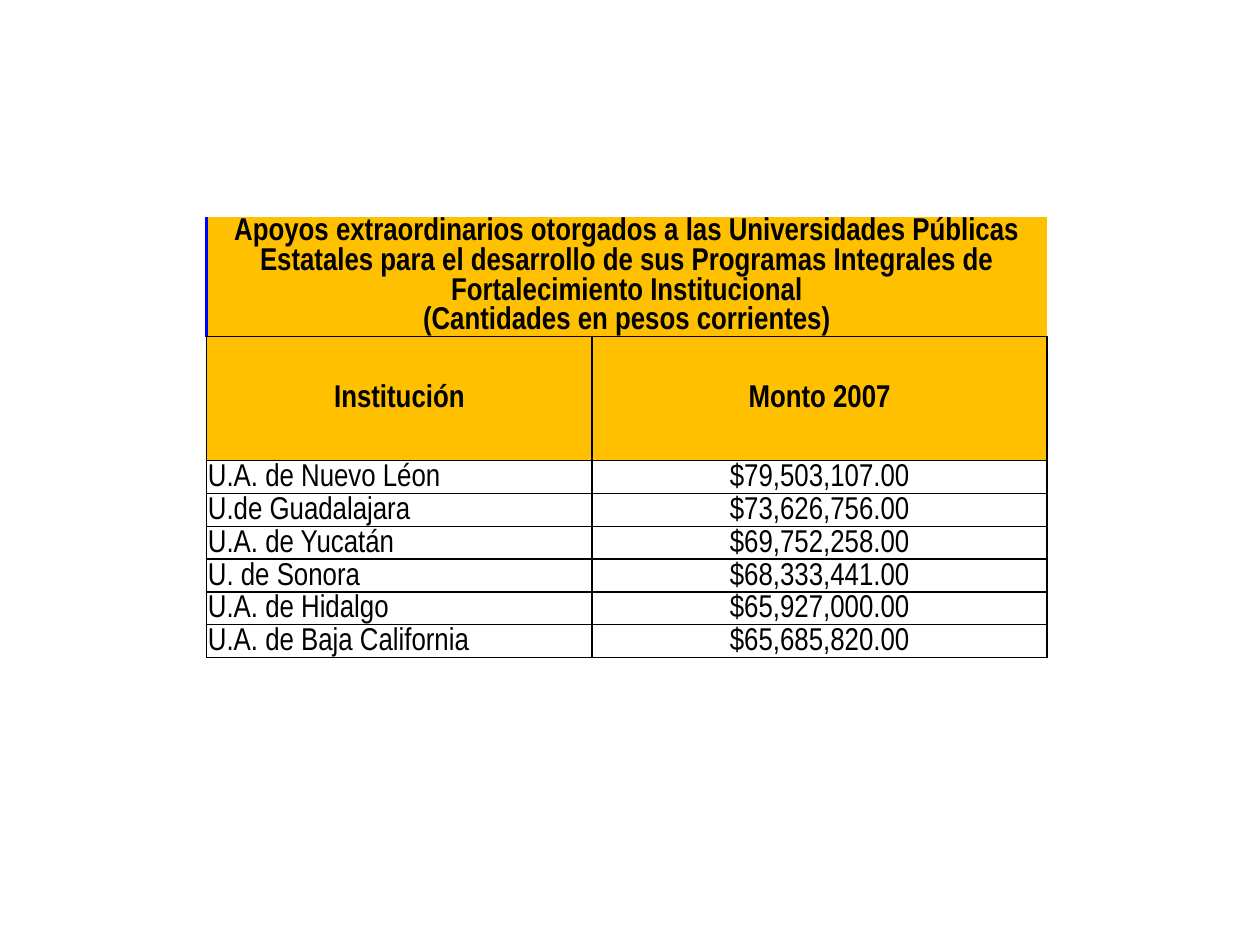
from lxml.etree import SubElement
from pptx import Presentation
from pptx.dml.color import RGBColor
from pptx.enum.text import MSO_ANCHOR as Anchor, PP_ALIGN as Align
from pptx.oxml.ns import qn
from pptx.util import Pt

TITLE = (
    "Apoyos extraordinarios otorgados a las Universidades Públicas Estatales "
    "para el desarrollo de sus Programas Integrales de Fortalecimiento Institucional"
    "\v(Cantidades en pesos corrientes)"
)
HEADINGS = ("Institución", "Monto 2007")
GRANTS = [
    ("U.A. de Nuevo Léon", "$79,503,107.00"),
    ("U.de Guadalajara", "$73,626,756.00"),
    ("U.A. de Yucatán", "$69,752,258.00"),
    ("U. de Sonora", "$68,333,441.00"),
    ("U.A. de Hidalgo", "$65,927,000.00"),
    ("U.A. de Baja California", "$65,685,820.00"),
]
COLORS = {"header": "FFC000", "text": "000000", "grid": "000000", "accent": "0000FF"}
FONT, FONT_SIZE = "Arial Narrow", 18
LEFT, TOP = 118.08, 123.84
COLUMN_WIDTHS = (220.32, 259.92)
ROW_HEIGHTS = [68, 71] + [18.75] * len(GRANTS)
GRID = ("grid", 1)
GRID_BORDERS = {"L": GRID, "R": GRID, "T": GRID, "B": GRID}
TITLE_BORDERS = {"L": ("accent", 2.25), "R": None, "T": None, "B": GRID}


def set_borders(cell, borders):
    """Draw the given sides of a cell; a side of None stays empty."""
    properties = cell._tc.get_or_add_tcPr()
    for side, border in borders.items():
        line = SubElement(properties, qn(f"a:ln{side}"))
        if border is None:
            SubElement(line, qn("a:noFill"))
            continue
        color, width = border
        line.set("w", str(Pt(width)))
        fill = SubElement(line, qn("a:solidFill"))
        SubElement(fill, qn("a:srgbClr")).set("val", COLORS[color])


def format_cell(cell, text, borders, header, centered):
    """Fill one table cell with text and style it."""
    set_borders(cell, borders)
    if header:
        cell.fill.solid()
        cell.fill.fore_color.rgb = RGBColor.from_string(COLORS["header"])
    else:
        cell.fill.background()
    cell.margin_left = cell.margin_right = cell.margin_top = Pt(0.72)
    cell.margin_bottom = Pt(0)
    cell.vertical_anchor = Anchor.MIDDLE if header else Anchor.BOTTOM
    para = cell.text_frame.paragraphs[0]
    para.text = text
    para.alignment = Align.CENTER if centered else Align.LEFT
    para.font.size = Pt(FONT_SIZE)
    for span in para.runs:
        span.font.name = FONT
        span.font.size = Pt(FONT_SIZE)
        span.font.bold = header
        span.font.color.rgb = RGBColor.from_string(COLORS["text"])


def main():
    """Build the slide with the table of grants."""
    deck = Presentation()
    deck.slide_width, deck.slide_height = Pt(720), Pt(540)
    page = deck.slides.add_slide(deck.slide_layouts[6])
    rows = [(TITLE, ""), HEADINGS, *GRANTS]
    table = page.shapes.add_table(
        len(rows), len(COLUMN_WIDTHS), Pt(LEFT), Pt(TOP),
        Pt(sum(COLUMN_WIDTHS)), Pt(sum(ROW_HEIGHTS)),
    ).table
    table.first_row = table.horz_banding = False
    for column, width in zip(table.columns, COLUMN_WIDTHS):
        column.width = Pt(width)
    for row, height in zip(table.rows, ROW_HEIGHTS):
        row.height = Pt(height)
    table.cell(0, 0).merge(table.cell(0, 1))
    for i, texts in enumerate(rows):
        borders = TITLE_BORDERS if i == 0 else GRID_BORDERS
        for j, text in enumerate(texts):
            header = i < 2
            format_cell(table.cell(i, j), text, borders, header, header or j == 1)
    deck.save("out.pptx")


if __name__ == "__main__":
    main()
